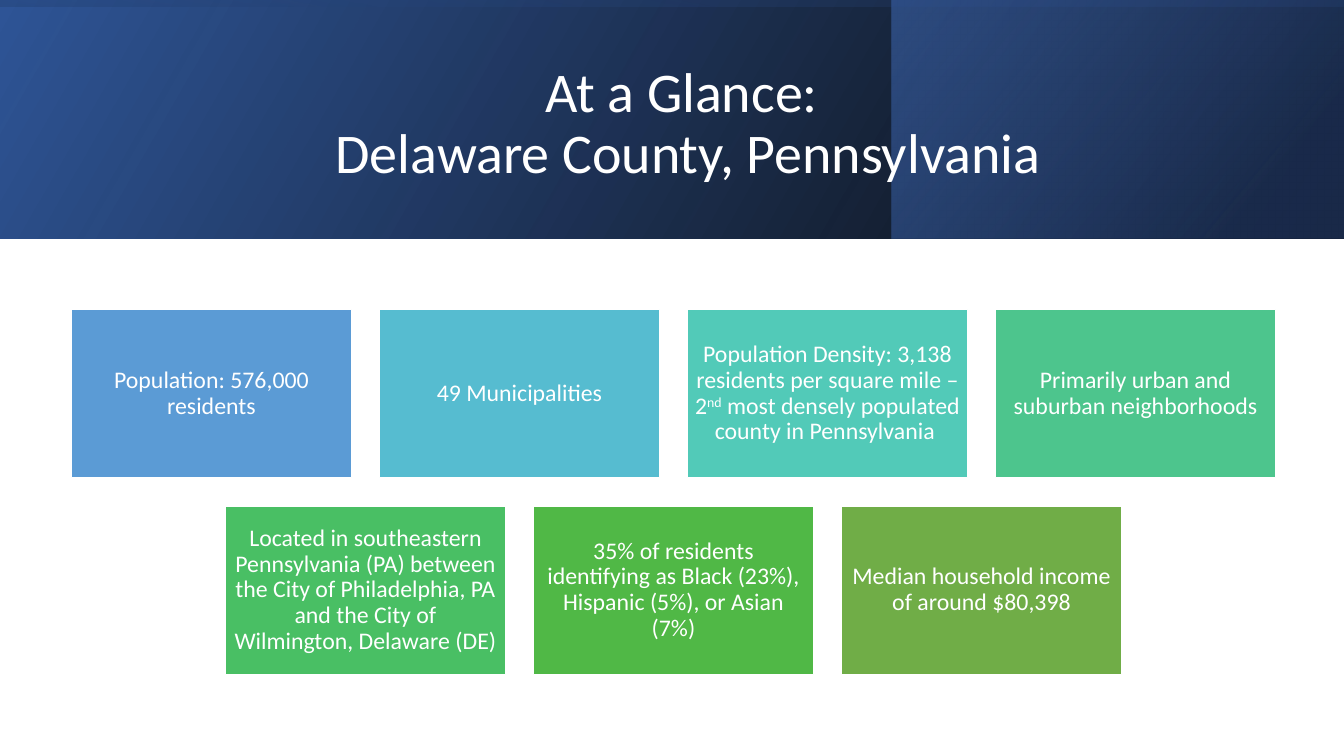
from lxml import etree
from pptx import Presentation
from pptx import util as u
from pptx.dml import color
from pptx.enum import shapes, text
from pptx.oxml import ns

COLORS = {
    "white": "FFFFFF", "black": "000000", "navy": "203864",
    "royal": "2F5597", "blue": "4472C4",
    "population": "5B9BD5", "municipalities": "56BCD0", "density": "52CAB8",
    "neighborhoods": "4DC58D", "location": "49BF64", "diversity": "50B846",
    "income": "70AD47",
}
FACT_ROWS = [
    [("population", ["Population: 576,000 residents"]),
     ("municipalities", ["49 Municipalities"]),
     ("density", ["Population Density: 3,138 residents per square mile – 2", "nd",
                  " most densely populated county in Pennsylvania "]),
     ("neighborhoods", ["Primarily urban and suburban neighborhoods"])],
    [("location", ["Located in southeastern Pennsylvania (PA) between the City of "
                   "Philadelphia, PA and the City of Wilmington, Delaware (DE)"]),
     ("diversity", ["35% of residents identifying as Black (23%), Hispanic (5%), "
                    "or Asian (7%)"]),
     ("income", ["Median household income of around $80,398"])],
]


def rgb(name):
    """Return the named colour."""
    return color.RGBColor.from_string(COLORS[name])


def add_block(slide, left, top, width, height):
    """Add a plain rectangle, measured in inches."""
    block = slide.shapes.add_shape(
        shapes.MSO_SHAPE.RECTANGLE,
        u.Inches(left), u.Inches(top), u.Inches(width), u.Inches(height))
    block.shadow.inherit = False
    return block


def format_paragraph(paragraph, size):
    """Centre a paragraph and set its white Calibri text."""
    paragraph.alignment = text.PP_ALIGN.CENTER
    paragraph.line_spacing = 0.9
    paragraph.font.size = u.Pt(size)
    paragraph.font.name = "Calibri"
    paragraph.font.color.rgb = rgb("white")


def add_glow(slide, box, stops, angle, rotation=0):
    """Add a mirrored gradient rectangle with (position, colour, opacity) stops."""
    glow = add_block(slide, *box)
    glow.rotation = rotation
    glow.line.fill.background()
    properties = glow._element.spPr
    properties.find(ns.qn("a:xfrm")).set("flipH", "1")
    glow.fill.gradient()
    glow.fill.gradient_angle = 360 - angle
    for stop, (position, name, _) in zip(glow.fill.gradient_stops, stops):
        stop.position = position / 100
        stop.color.rgb = rgb(name)
    tints = properties.find(ns.qn("a:gradFill")).iter(ns.qn("a:srgbClr"))
    for tint, (_, _, opacity) in zip(tints, stops):
        etree.SubElement(tint, ns.qn("a:alpha")).set("val", str(opacity * 1000))


def add_banner(slide, left, top, width, height):
    """Build the layered blue banner and its title."""
    add_glow(slide, (left, top, width, height),
             [(0, "black", 96), (100, "royal", 100)], 330)
    accent = 4.49
    add_glow(slide, (left + width - accent, top, accent, height),
             [(19, "navy", 68), (100, "blue", 48)], 320)
    shift = (width - height) / 2
    add_glow(slide, (left + shift, top - shift, height, width),
             [(23, "royal", 16), (99, "black", 45)], 350, 270)

    heading = slide.shapes.title
    heading.left, heading.top = u.Inches(left + 1.51), u.Inches(top + 0.38)
    heading.width, heading.height = u.Inches(10.63), u.Inches(1.72)
    frame = heading.text_frame
    frame.text = "At a Glance: \vDelaware County, Pennsylvania"
    frame.word_wrap = True
    frame.auto_size = text.MSO_AUTO_SIZE.NONE
    frame.vertical_anchor = text.MSO_ANCHOR.MIDDLE
    format_paragraph(frame.paragraphs[0], 40)
    slide.shapes._spTree.append(heading._element)


def add_fact(slide, box, name, parts):
    """Add one fact card; every second part of its text is superscript."""
    card = add_block(slide, *box)
    card.fill.solid()
    card.fill.fore_color.rgb = rgb(name)
    card.line.color.rgb = rgb("white")
    card.line.width = u.Pt(1)
    frame = card.text_frame
    frame.word_wrap = True
    frame.vertical_anchor = text.MSO_ANCHOR.MIDDLE
    frame.margin_left = frame.margin_right = u.Inches(0.07)
    frame.margin_top = frame.margin_bottom = u.Inches(0.07)
    fact = frame.paragraphs[0]
    format_paragraph(fact, 17)
    for index, part in enumerate(parts):
        run = fact.add_run()
        run.text = part
        if index % 2:
            run._r.get_or_add_rPr().set("baseline", "30000")


def add_facts(slide, left, top, width, height):
    """Lay out centred rows of fact cards."""
    gap = 0.28
    columns = max(len(row) for row in FACT_ROWS)
    card_width = (width - gap * (columns - 1)) / columns
    card_height = (height - gap * (len(FACT_ROWS) - 1)) / len(FACT_ROWS)
    for line, row in enumerate(FACT_ROWS):
        indent = (columns - len(row)) * (card_width + gap) / 2
        for column, (name, parts) in enumerate(row):
            box = (left + indent + column * (card_width + gap),
                   top + line * (card_height + gap), card_width, card_height)
            add_fact(slide, box, name, parts)


def main():
    """Build and save the county overview slide."""
    deck = Presentation()
    deck.slide_width, deck.slide_height = u.Inches(13.33), u.Inches(7.5)
    slide = deck.slides.add_slide(deck.slide_layouts[5])
    add_banner(slide, 0, 0, 13.33, 2.37)
    add_facts(slide, 0.71, 3.07, 11.94, 3.62)
    deck.save("out.pptx")


if __name__ == "__main__":
    main()
